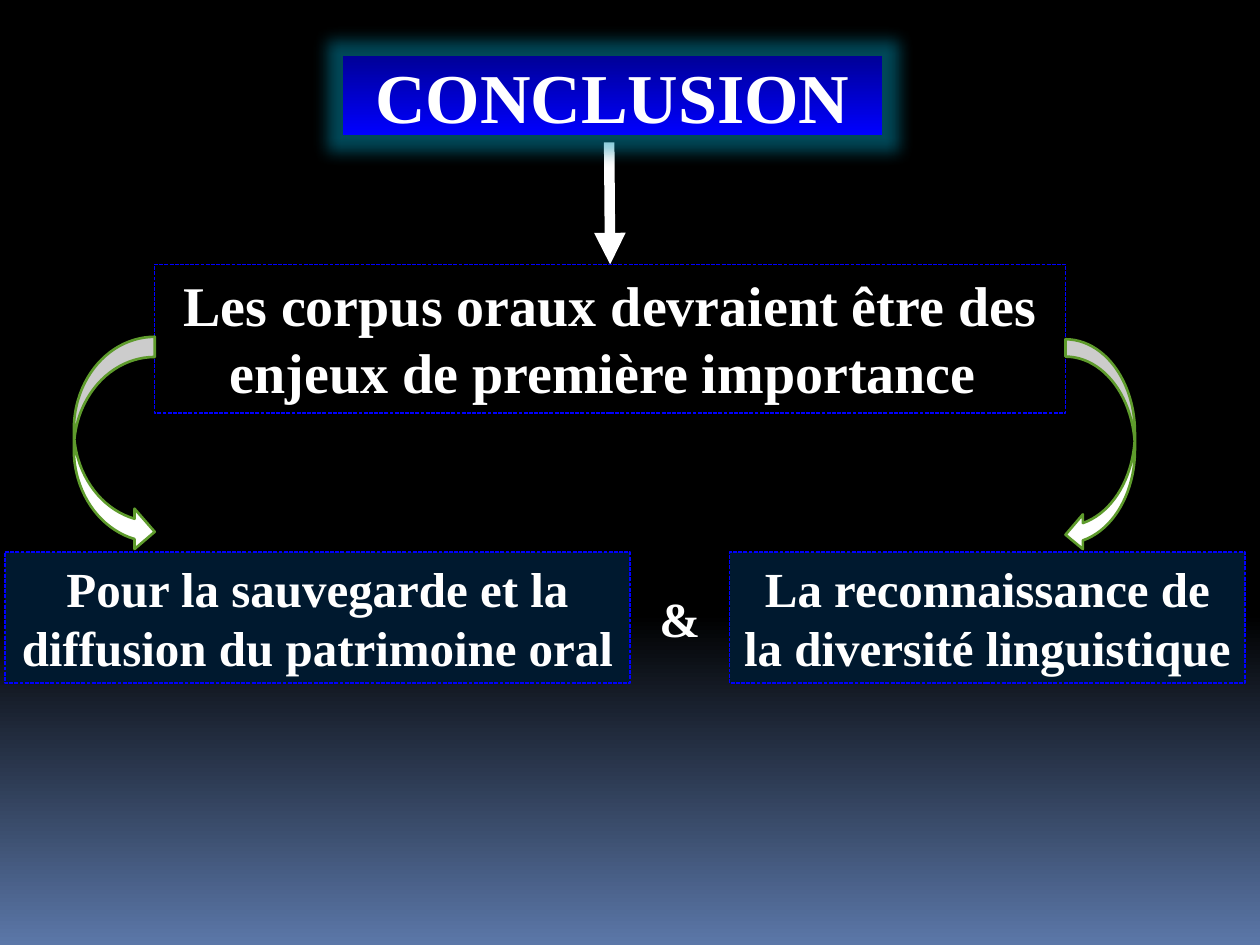
from collections import namedtuple

from lxml import etree
from pptx import Presentation
from pptx.dml.color import RGBColor
from pptx.enum.dml import MSO_LINE
from pptx.enum.shapes import MSO_CONNECTOR, MSO_SHAPE
from pptx.enum.text import MSO_ANCHOR, MSO_AUTO_SIZE, PP_ALIGN
from pptx.oxml import parse_xml
from pptx.oxml.ns import nsdecls, qn
from pptx.util import Cm, Pt

COLORS = {
    "white": "FFFFFF",
    "black": "000000",
    "horizon": "5B77A8",
    "title_top": "000097",
    "title_bottom": "0000FF",
    "glow": "00B4DC",
    "border": "0000FF",
    "goal": "00192F",
    "arrow_line": "5E9B2C",
}
FONT = "Times New Roman"

# Every box is in centimetres.
Box = namedtuple("Box", "left top width height")
TITLE = Box(6.91, 1.12, 10.87, 1.6)
STATEMENT = Box(3.12, 5.33, 18.36, 3)
GOALS = Box(0.1, 11.13, 25, 2.64)


def color(name):
    return RGBColor.from_string(COLORS[name])


def lengths(box):
    return [Cm(value) for value in box]


def set_text(shape, text, size=28, anchor=MSO_ANCHOR.TOP, auto_size=MSO_AUTO_SIZE.NONE):
    frame = shape.text_frame
    frame.word_wrap = True
    frame.auto_size = auto_size
    frame.vertical_anchor = anchor
    paragraph = frame.paragraphs[0]
    paragraph.alignment = PP_ALIGN.CENTER
    run = paragraph.add_run()
    run.text = text
    run.font.name = FONT
    run.font.size = Pt(size)
    run.font.bold = True
    run.font.color.rgb = color("white")


def set_gradient(fill, *stops):
    """Fill from top to bottom with two (position, colour name) stops."""
    fill.gradient()
    fill.gradient_angle = 270
    for stop, (position, name) in zip(fill.gradient_stops, stops):
        stop.position = position
        stop.color.rgb = color(name)


def add_panel(slide, box, text, size=28, fill=None):
    panel = slide.shapes.add_shape(MSO_SHAPE.RECTANGLE, *lengths(box))
    panel.shadow.inherit = False
    if fill:
        panel.fill.solid()
        panel.fill.fore_color.rgb = color(fill)
    else:
        panel.fill.background()
    panel.line.color.rgb = color("border")
    panel.line.width = Pt(0.75)
    panel.line.dash_style = MSO_LINE.SQUARE_DOT
    set_text(panel, text, size=size, auto_size=MSO_AUTO_SIZE.SHAPE_TO_FIT_TEXT)


def add_down_arrow(slide, title_box, target_box):
    middle = target_box.left + target_box.width / 2
    start = title_box.top + title_box.height + 0.15
    arrow = slide.shapes.add_connector(
        MSO_CONNECTOR.STRAIGHT, Cm(middle - 0.02), Cm(start), Cm(middle), Cm(target_box.top))
    arrow.line.color.rgb = color("white")
    arrow.line.width = Pt(6)
    etree.SubElement(arrow.line._get_or_add_ln(), qn("a:tailEnd"), type="triangle")
    etree.SubElement(arrow.element.spPr, qn("a:effectLst"))


def add_title(slide, box):
    title = slide.shapes.title
    title.left, title.top, title.width, title.height = lengths(box)
    set_gradient(title.fill, (0, "title_top"), (1, "title_bottom"))
    set_text(title, "CONCLUSION", size=40, anchor=MSO_ANCHOR.MIDDLE)
    title.element.spPr.append(parse_xml(
        f'<a:effectLst {nsdecls("a")}>'
        f'<a:glow rad="228600"><a:srgbClr val="{COLORS["glow"]}">'
        '<a:alpha val="40000"/></a:srgbClr></a:glow>'
        '<a:outerShdw blurRad="44450" dist="27940" dir="5400000">'
        f'<a:srgbClr val="{COLORS["black"]}"><a:alpha val="32000"/></a:srgbClr>'
        '</a:outerShdw></a:effectLst>'))
    # The glow lies over the start of the down arrow.
    title.element.getparent().append(title.element)


def add_goals(slide, box):
    left_width, right_width = 12.6, 10.39
    right = box.left + box.width - right_width
    add_panel(slide, box._replace(width=left_width),
              "Pour la sauvegarde et la diffusion du patrimoine oral ", fill="goal")
    add_panel(slide, box._replace(left=right, width=right_width),
              "La reconnaissance de la diversité linguistique", fill="goal")
    middle = (box.left + left_width + right) / 2
    ampersand = Box(middle - 0.75, box.top + 0.6, 1.5, 1.45)
    set_text(slide.shapes.add_textbox(*lengths(ampersand)), "&",
             auto_size=MSO_AUTO_SIZE.SHAPE_TO_FIT_TEXT)


def add_side_arrows(slide, source_box, target_top):
    """Curve down from both sides of the source box to the target."""
    right = source_box.left + source_box.width
    for kind, left, width, height in (
        (MSO_SHAPE.CURVED_RIGHT_ARROW, source_box.left - 1.63, 1.63, 4.34),
        (MSO_SHAPE.CURVED_LEFT_ARROW, right, 1.4, 4.29),
    ):
        box = Box(left, target_top - height, width, height)
        arrow = slide.shapes.add_shape(kind, *lengths(box))
        arrow.shadow.inherit = False
        arrow.fill.solid()
        arrow.fill.fore_color.rgb = color("white")
        arrow.line.color.rgb = color("arrow_line")
        arrow.line.width = Pt(1.5)


def main():
    presentation = Presentation()
    presentation.slide_width = Cm(25.4)
    presentation.slide_height = Cm(19.05)
    slide = presentation.slides.add_slide(presentation.slide_layouts.get_by_name("Title Only"))
    set_gradient(slide.background.fill, (0.65, "black"), (1, "horizon"))

    add_down_arrow(slide, TITLE, STATEMENT)
    add_panel(slide, STATEMENT,
              "Les corpus oraux devraient être des enjeux de première importance ", size=32)
    add_title(slide, TITLE)
    add_goals(slide, GOALS)
    add_side_arrows(slide, STATEMENT, GOALS.top)
    presentation.save("out.pptx")


if __name__ == "__main__":
    main()
